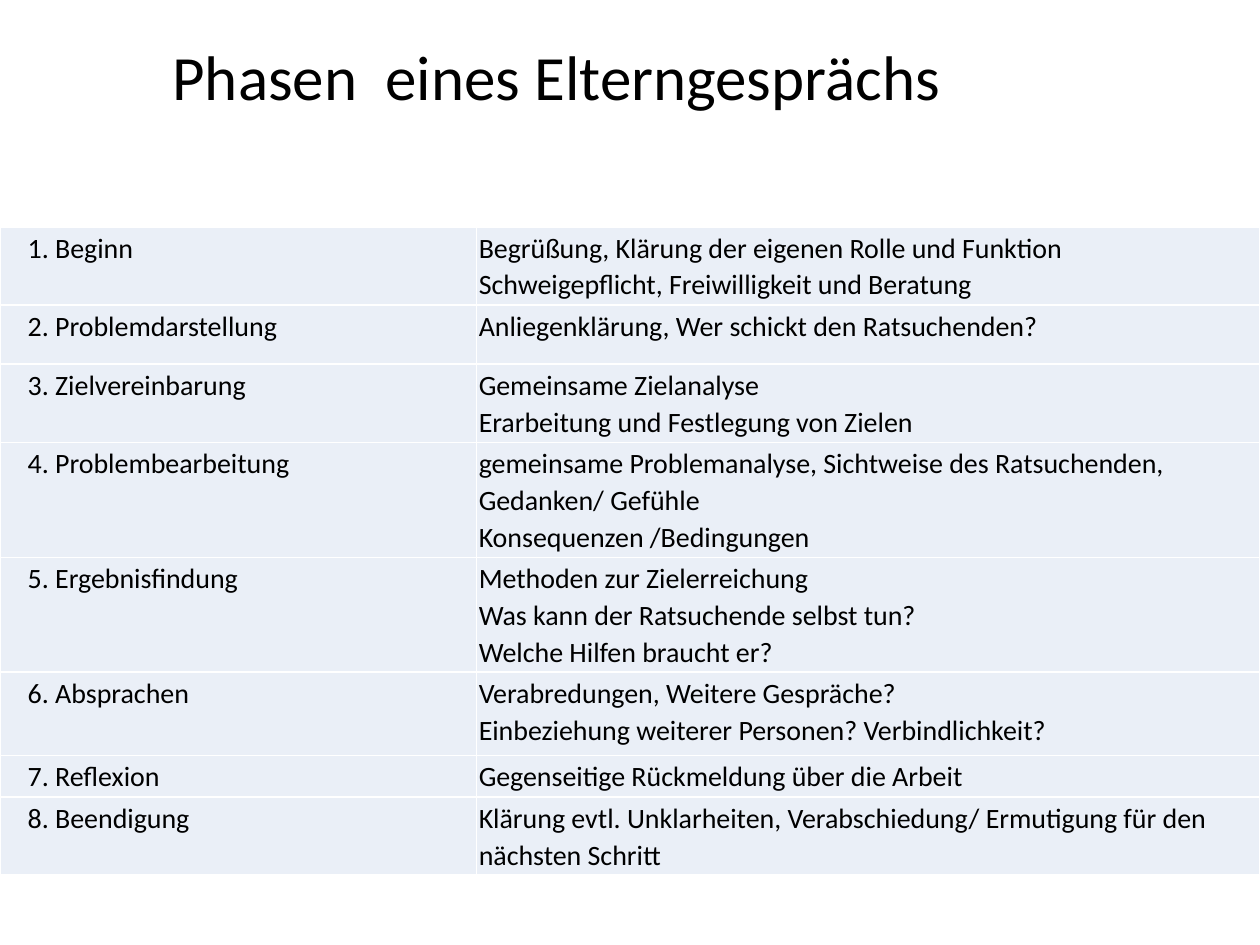
from lxml.etree import SubElement
from pptx import Presentation
from pptx.dml.color import RGBColor
from pptx.oxml.ns import qn
from pptx.util import Inches, Pt

PHASES = [
    ("1. Beginn", "Begrüßung, Klärung der eigenen Rolle und Funktion\n"
     "Schweigepflicht, Freiwilligkeit und Beratung", 0.6),
    ("2. Problemdarstellung", "Anliegenklärung, Wer schickt den Ratsuchenden?", 0.47),
    ("3. Zielvereinbarung", "Gemeinsame Zielanalyse\n"
     "Erarbeitung und Festlegung von Zielen", 0.6),
    ("4. Problembearbeitung", "gemeinsame Problemanalyse, Sichtweise des Ratsuchenden, "
     "Gedanken/ Gefühle\nKonsequenzen /Bedingungen", 0.89),
    ("5. Ergebnisfindung", "Methoden zur Zielerreichung\n"
     "Was kann der Ratsuchende selbst tun?\nWelche Hilfen braucht er?", 0.89),
    ("6. Absprachen", "Verabredungen, Weitere Gespräche?\n"
     "Einbeziehung weiterer Personen? Verbindlichkeit?", 0.66),
    ("7. Reflexion", "Gegenseitige Rückmeldung über die Arbeit", 0.32),
    ("8. Beendigung", "Klärung evtl. Unklarheiten, Verabschiedung/ Ermutigung für den "
     "nächsten Schritt", 0.59),
]
COLUMN_WIDTHS = (3.78, 6.22)
LEFT_MARGINS = (0.22, 0.02)
CELL_FORMAT = {"margin_right": Inches(0.02), "margin_top": Inches(0.02),
               "margin_bottom": Inches(0.02)}


def write(para, text, size):
    para.text = text
    for name, value in {"name": "Calibri", "size": Pt(size)}.items():
        setattr(para.font, name, value)
    para.font.color.rgb = RGBColor.from_string("000000")


def add_borders(cell, color):
    for side in ("lnL", "lnR", "lnT", "lnB"):
        line = SubElement(cell._tc.get_or_add_tcPr(), qn(f"a:{side}"), w=str(Pt(1)))
        SubElement(SubElement(line, qn("a:solidFill")), qn("a:srgbClr"), val=color)


deck = Presentation()
deck.slide_width, deck.slide_height = Inches(10), Inches(7.5)
page = deck.slides.add_slide(deck.slide_layouts[6])

# Phase table
height = sum(phase[2] for phase in PHASES)
table = page.shapes.add_table(len(PHASES), 2, Inches(0), Inches(1.8),
                              Inches(10), Inches(height)).table
table.first_row = table.horz_banding = False
for column, width in zip(table.columns, COLUMN_WIDTHS):
    column.width = Inches(width)

for row, (phase, content, row_height) in zip(table.rows, PHASES):
    row.height = Inches(row_height)
    for cell, text, margin in zip(row.cells, (phase, content), LEFT_MARGINS):
        cell.margin_left = Inches(margin)
        for name, value in CELL_FORMAT.items():
            setattr(cell, name, value)
        add_borders(cell, "FFFFFF")
        cell.fill.solid()
        cell.fill.fore_color.rgb = RGBColor.from_string("EAEFF7")
        para = cell.text_frame.paragraphs[0]
        write(para, text, 16)
        para.line_spacing = 1.07

# Title
title = page.shapes.add_textbox(Inches(1.27), Inches(0.25), Inches(6.45), Inches(0.71))
title.text_frame.word_wrap = True
write(title.text_frame.paragraphs[0], "Phasen  eines Elterngesprächs", 36)

deck.save("out.pptx")
